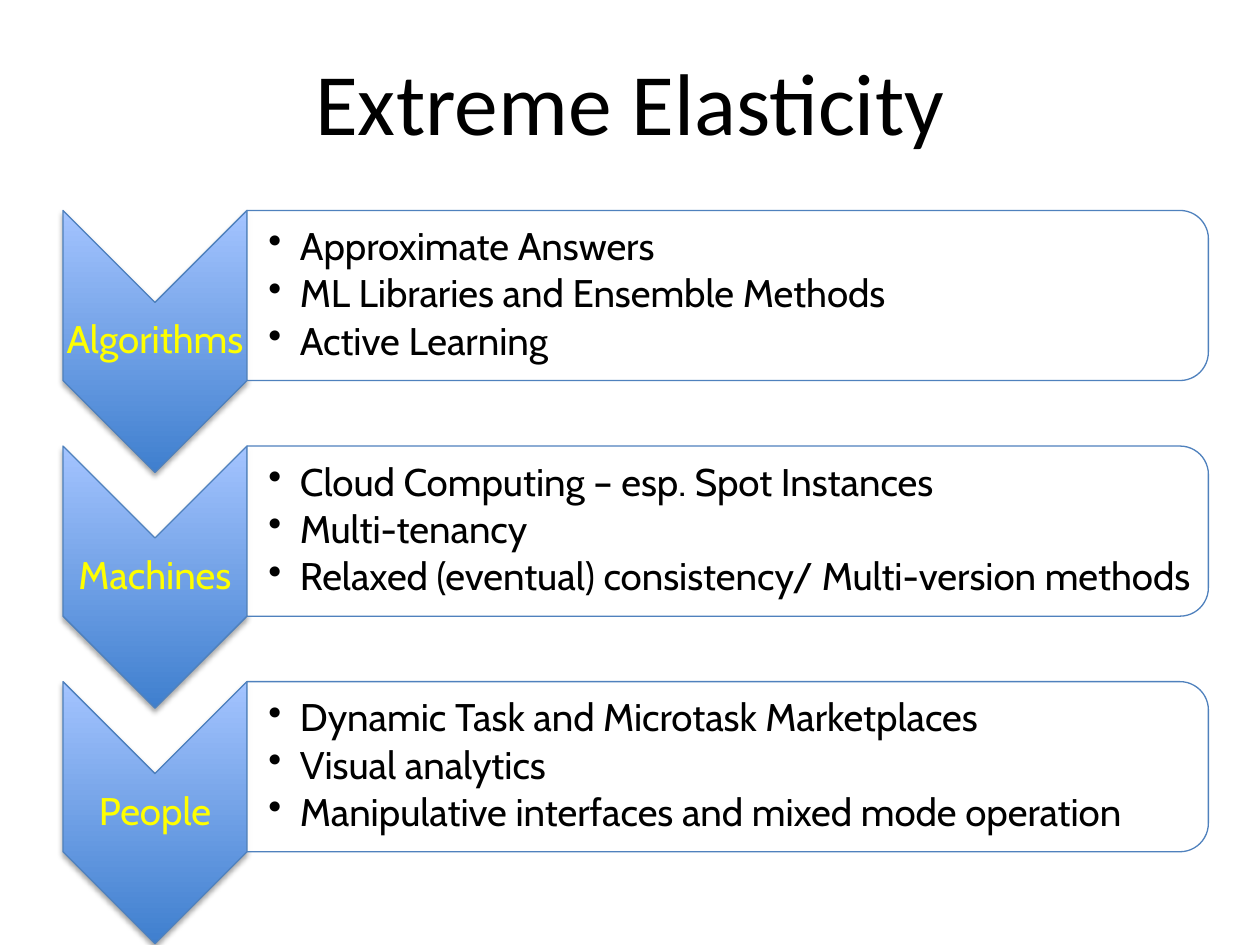
from lxml import etree
from pptx import Presentation
from pptx.dml.color import RGBColor
from pptx.enum.shapes import MSO_SHAPE
from pptx.enum.text import MSO_ANCHOR, PP_ALIGN
from pptx.oxml.ns import qn
from pptx.util import Inches, Pt

CHEVRON, PANEL = MSO_SHAPE.CHEVRON, MSO_SHAPE.ROUND_2_SAME_RECTANGLE
MIDDLE, CENTER = MSO_ANCHOR.MIDDLE, PP_ALIGN.CENTER

BLACK = RGBColor(0x00, 0x00, 0x00)
WHITE = RGBColor(0xFF, 0xFF, 0xFF)
YELLOW = RGBColor(0xFF, 0xFF, 0x00)
OUTLINE = RGBColor(0x4F, 0x81, 0xBD)
DARK_BLUE = RGBColor(0x3F, 0x7F, 0xCE)
LIGHT_BLUE = RGBColor(0xA4, 0xC4, 0xFF)

ROWS = [
    ("Algorithms", ["Approximate Answers",
                    "ML Libraries and Ensemble Methods",
                    "Active Learning"]),
    ("Machines", ["Cloud Computing – esp. Spot Instances",
                  "Multi-tenancy",
                  "Relaxed (eventual) consistency/ Multi-version methods"]),
    ("People", ["Dynamic Task and Microtask Marketplaces",
                "Visual analytics",
                "Manipulative interfaces and mixed mode operation"]),
]
# Grid of the list, in inches
LEFT, TOP, WIDTH, PITCH = 0.5, 1.67, 9.09, 1.87
CHEVRON_W, CHEVRON_H, PANEL_H = 1.46, 2.08, 1.35


def add_child(parent, tag, **attrs):
    child = etree.SubElement(parent, qn(tag))
    for name, value in attrs.items():
        child.set(name, str(value))
    return child


def add_turned_shape(slide, kind, left, top, width, height):
    """Add a shape turned by 90 degrees that fills the given upright box."""
    sp = slide.shapes.add_shape(
        kind, Inches(left + (width - height) / 2),
        Inches(top + (height - width) / 2), Inches(height), Inches(width))
    sp.rotation = 90
    sp.shadow.inherit = False
    sp.line.color.rgb = OUTLINE
    sp.line.width = Pt(0.75)
    return sp


def add_text(slide, lines, left, top, width, height, color, inset, gap):
    tf = slide.shapes.add_textbox(
        Inches(left), Inches(top), Inches(width), Inches(height)).text_frame
    tf.word_wrap = True
    tf.vertical_anchor = MIDDLE
    tf.margin_left = Inches(inset)
    tf.margin_top = tf.margin_right = tf.margin_bottom = Inches(0.02)
    tf.text = "\n".join(lines)
    for p in tf.paragraphs:
        p.line_spacing = 0.9
        p.space_after = Pt(gap)
        p.font.name = "Cabin"
        p.font.size = Pt(22)
        p.font.color.rgb = color
    return tf


def add_chevron(slide, label, left, top, width, height):
    sp = add_turned_shape(slide, CHEVRON, left, top, width, height)
    sp.fill.gradient()
    sp.fill.gradient_angle = 90
    for stop, color, position in zip(sp.fill.gradient_stops,
                                     (DARK_BLUE, LIGHT_BLUE), (0, 1)):
        stop.color.rgb = color
        stop.position = position
    spPr = sp._element.spPr
    spPr.find(qn("a:gradFill")).set("rotWithShape", "0")
    # Soft shadow below the chevron
    shadow = add_child(spPr.find(qn("a:effectLst")), "a:outerShdw",
                       blurRad=Pt(3.1), dist=Pt(1.8), dir=5400000,
                       rotWithShape=0)
    add_child(add_child(shadow, "a:srgbClr", val=BLACK), "a:alpha", val=35000)
    # Label between the notch and the point
    notch = width / 2
    tf = add_text(slide, [label], left, top + notch, width,
                  height - 2 * notch, YELLOW, 0.02, 7.7)
    tf.paragraphs[0].alignment = CENTER


def add_panel(slide, items, left, top, width, height):
    sp = add_turned_shape(slide, PANEL, left, top, width, height)
    sp.fill.solid()
    sp.fill.fore_color.rgb = WHITE
    add_child(sp._element.spPr.find(qn("a:solidFill"))[0], "a:alpha", val=90000)
    # Bulleted list, kept clear of the rounded corners
    corner = height * 0.05
    tf = add_text(slide, items, left, top + corner, width - corner,
                  height - 2 * corner, BLACK, 0.17, 3.3)
    for p in tf.paragraphs:
        p.level = 1
        pPr = p._p.get_or_add_pPr()
        pPr.set("marL", str(Inches(0.25)))
        pPr.set("indent", str(-Inches(0.25)))
        bullet = etree.Element(qn("a:buChar"), char="•")
        pPr.find(qn("a:defRPr")).addprevious(bullet)


def add_row(slide, label, items, left, top, width):
    add_chevron(slide, label, left, top, CHEVRON_W, CHEVRON_H)
    add_panel(slide, items, left + CHEVRON_W, top, width - CHEVRON_W, PANEL_H)


def add_title(slide, text, left, top, width, height):
    title = slide.shapes.title
    title.left, title.top = Inches(left), Inches(top)
    title.width, title.height = Inches(width), Inches(height)
    tf = title.text_frame
    tf.text = text
    tf.vertical_anchor = MIDDLE
    p = tf.paragraphs[0]
    p.alignment = CENTER
    p.font.name = "Calibri"
    p.font.size = Pt(50)
    p.font.color.rgb = BLACK


def main():
    prs = Presentation()
    prs.slide_width, prs.slide_height = Inches(10), Inches(7.5)
    slide = prs.slides.add_slide(prs.slide_layouts.get_by_name("Title Only"))
    add_title(slide, "Extreme Elasticity", 0.5, 0.17, 9, 1.25)
    for i, (label, items) in enumerate(ROWS):
        add_row(slide, label, items, LEFT, TOP + i * PITCH, WIDTH)
    prs.save("out.pptx")


if __name__ == "__main__":
    main()
